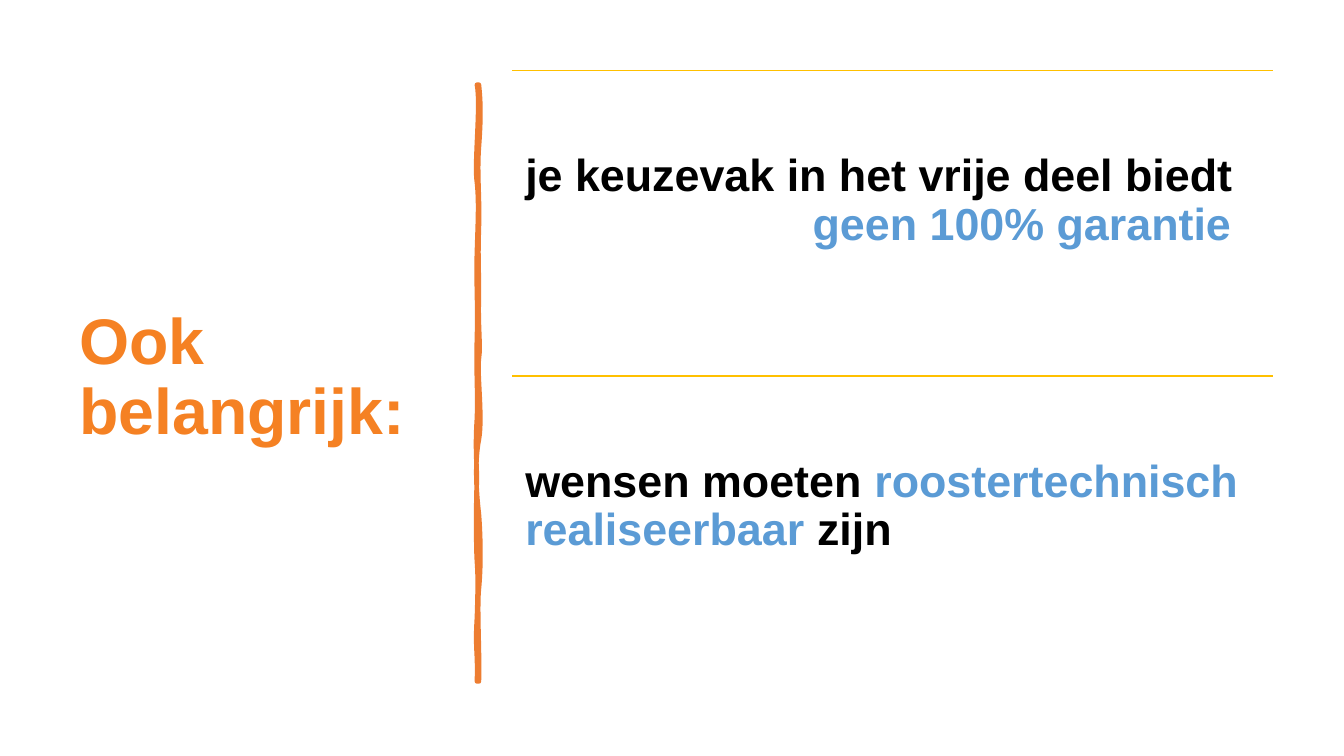
from lxml.etree import SubElement
from pptx import Presentation
from pptx.dml.color import RGBColor
from pptx.enum.shapes import MSO_CONNECTOR
from pptx.enum.text import MSO_ANCHOR
from pptx.oxml.ns import qn
from pptx.util import Inches, Pt

COLUMNS, ROWS = 1333, 750
CELL = Inches(0.01)
FONT = "Arial"
COLORS = {
    "title": "F58123",
    "brush": "ED7D31",
    "rule": "FFC000",
    "text": "000000",
    "accent": "5B9BD5",
}

LEFT, WIDTH = 508, 755
FIRST_ROW, ROW_HEIGHT = 70, 303
POINTS = [
    ([("je keuzevak in het vrije deel biedt ", "text"),
      ("geen 100% garantie", "accent")], 285),
    ([("wensen moeten ", "text"),
      ("roostertechnisch realiseerbaar", "accent"),
      (" zijn", "text")], 0),
]

BRUSH_START = (475, 84)
BRUSH_CURVES = [
    (477, 102, 477, 119, 475, 146), (473, 173, 476, 195, 475, 226),
    (474, 257, 475, 262, 475, 294), (474, 325, 477, 342, 475, 356),
    (473, 370, 479, 414, 475, 436), (471, 457, 472, 484, 475, 510),
    (477, 536, 477, 564, 475, 584), (473, 603, 476, 650, 475, 676),
    (474, 676, 473, 676, 473, 676), (474, 646, 471, 644, 473, 613),
    (474, 583, 474, 570, 473, 557), (472, 544, 472, 495, 473, 477),
    (473, 459, 471, 445, 473, 415), (474, 386, 472, 373, 473, 335),
    (474, 298, 472, 281, 473, 250), (474, 218, 475, 200, 473, 181),
    (470, 163, 477, 104, 473, 84), (474, 84, 474, 84, 475, 84),
]


def color(name):
    return RGBColor.from_string(COLORS[name])


def bend_segments(shape, curves):
    segments = list(shape._element.iter(qn("a:lnTo")))
    for segment, curve in zip(segments, curves):
        outline = segment.getparent()
        bend = SubElement(outline, qn("a:cubicBezTo"))
        for x, y in zip(curve[::2], curve[1::2]):
            SubElement(bend, qn("a:pt"),
                       x=str(CELL * x - shape.left), y=str(CELL * y - shape.top))
        outline.replace(segment, bend)


def add_brush_stroke(slide):
    builder = slide.shapes.build_freeform(*(CELL * value for value in BRUSH_START))
    builder.add_line_segments(
        [(CELL * curve[4], CELL * curve[5]) for curve in BRUSH_CURVES], close=True)
    shape = builder.convert_to_shape()
    bend_segments(shape, BRUSH_CURVES)
    shape.shadow.inherit = False
    shape.fill.solid()
    shape.fill.fore_color.rgb = color("brush")
    shape.line.color.rgb = color("brush")
    shape.line.width = Pt(3.25)


def add_rule(slide, row):
    connector = slide.shapes.add_connector(
        MSO_CONNECTOR.STRAIGHT,
        CELL * LEFT, CELL * row, CELL * (LEFT + WIDTH), CELL * row,
    )
    connector.line.color.rgb = color("rule")
    connector.line.width = Pt(1)
    SubElement(connector._element.spPr, qn("a:effectLst"))


def add_text(slide, area, runs, size, insets, anchor, hanging=0):
    side, top, bottom = insets
    shape = slide.shapes.add_textbox(*(CELL * value for value in area))
    frame = shape.text_frame
    frame.word_wrap = True
    frame.vertical_anchor = anchor
    frame.margin_left = frame.margin_right = CELL * side
    frame.margin_top = CELL * top
    frame.margin_bottom = CELL * bottom
    paragraph = frame.paragraphs[0]
    paragraph.line_spacing = 0.9
    if hanging:
        properties = paragraph._p.get_or_add_pPr()
        properties.set("marL", str(CELL * hanging))
        properties.set("indent", str(-CELL * hanging))
    for text, color_name in runs:
        run = paragraph.add_run()
        run.text = text
        run.font.name = FONT
        run.font.size = Pt(size)
        run.font.bold = True
        run.font.color.rgb = color(color_name)


def main():
    presentation = Presentation()
    presentation.slide_width = CELL * COLUMNS
    presentation.slide_height = CELL * ROWS
    slide = presentation.slides.add_slide(presentation.slide_layouts[6])

    add_text(slide, (69, 70, 374, 611), [("Ook belangrijk:", "title")],
             46, (10, 5, 5), MSO_ANCHOR.MIDDLE)
    add_brush_stroke(slide)
    for index, (runs, hanging) in enumerate(POINTS):
        row = FIRST_ROW + index * ROW_HEIGHT
        add_rule(slide, row)
        add_text(slide, (LEFT, row, WIDTH, ROW_HEIGHT), runs,
                 32, (13, 82, 13), MSO_ANCHOR.TOP, hanging)

    presentation.save("out.pptx")


if __name__ == "__main__":
    main()
